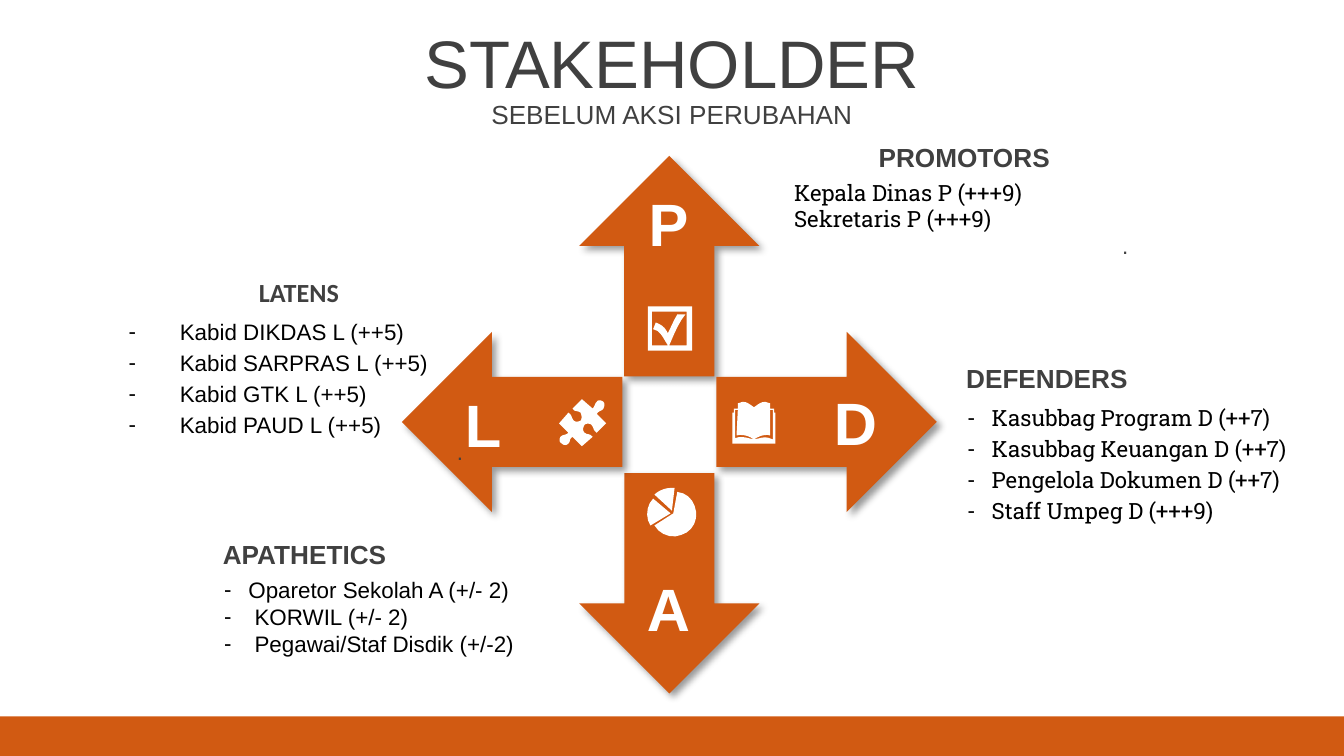
from dataclasses import dataclass
from typing import NamedTuple

from lxml import etree
from pptx import Presentation
from pptx.dml.color import RGBColor
from pptx.enum.shapes import MSO_SHAPE
from pptx.enum.text import MSO_ANCHOR, MSO_AUTO_SIZE, PP_ALIGN
from pptx.oxml.ns import qn
from pptx.util import Inches, Pt

RECTANGLE, UP_ARROW = MSO_SHAPE.RECTANGLE, MSO_SHAPE.UP_ARROW
LEFT, CENTER, RIGHT = PP_ALIGN.LEFT, PP_ALIGN.CENTER, PP_ALIGN.RIGHT
TOP, MIDDLE = MSO_ANCHOR.TOP, MSO_ANCHOR.MIDDLE
GROW, FIXED = MSO_AUTO_SIZE.SHAPE_TO_FIT_TEXT, MSO_AUTO_SIZE.NONE


@dataclass(frozen=True)
class Theme:
    """Colours, fonts and type sizes of the slide."""
    accent: str = "D15A12"
    grey: str = "404040"
    black: str = "000000"
    white: str = "FFFFFF"
    sans: str = "Arial"
    slab: str = "Roboto Slab"
    humanist: str = "Calibri"
    title: int = 36
    letter: int = 32
    heading: int = 14
    body: int = 12


class Box(NamedTuple):
    """A rectangle in inches."""
    left: float
    top: float
    width: float
    height: float

    def emu(self):
        """Return the four lengths for python-pptx."""
        return [Inches(length) for length in self]


THEME = Theme()
BOOK = ("M 16 28 C 22 27 24 25 30 28 L 30 6 L 28 6 C 28 12 28 19 28 25 C 25 24 20 25 16 28 "
        "L 16 4 C 19 2 21 0 24 0 C 25 0 27 1 28 1 L 28 5 L 31 5 L 31 8 L 32 8 L 32 31 "
        "L 0 31 L 0 8 L 1 8 L 1 5 L 4 5 L 4 1 C 5 1 7 0 8 0 C 11 0 13 2 16 4 L 16 28 "
        "C 12 25 7 24 3 25 L 4 6 L 2 6 L 2 27 C 7 25 11 27 16 28")
PUZZLE = ("M 33 2 C 34 3 34 5 33 7 C 32 9 30 8 28 11 L 35 18 L 28 25 C 25 23 26 21 24 19 "
          "C 23 18 20 18 19 19 C 18 21 17 23 19 25 C 22 27 22 25 25 28 L 17 35 L 10 28 "
          "C 7 30 9 31 7 33 C 5 35 3 34 2 33 C 0 32 0 30 1 28 C 3 26 5 27 7 25 L 0 18 "
          "L 7 10 C 10 12 9 14 11 16 C 12 17 14 17 16 16 C 17 15 17 12 16 10 "
          "C 13 8 12 10 10 7 L 17 0 L 25 7 C 27 5 26 4 28 2 C 29 0 32 1 33 2")
PIE = ("M 4 8 L 17 19 L 2 28 C -2 22 -1 13 4 8 "
       "M 22 3 C 30 4 35 10 36 18 C 37 26 32 33 25 35 C 18 38 9 35 5 28 L 19 19 "
       "M 18 0 L 20 0 L 18 17 L 5 5 C 8 2 13 0 18 0")
CHECK = ("M 3 4 L 3 29 L 15 29 C 12 25 10 18 4 17 L 6 12 C 11 14 13 16 15 20 "
         "C 18 14 19 11 22 6 L 28 6 C 23 12 19 22 16 29 L 29 29 L 29 4 "
         "M 0 0 L 33 0 L 33 33 L 0 33")


def paint(shape, color):
    """Fill a shape with one colour, without outline or inherited shadow."""
    shape.shadow.inherit = False
    shape.fill.solid()
    shape.fill.fore_color.rgb = RGBColor.from_string(color)
    shape.line.fill.background()


def cast_shadow(shape):
    """Give a shape a soft shadow towards the lower right."""
    effects = shape._element.spPr.find(qn("a:effectLst"))
    shadow = etree.SubElement(effects, qn("a:outerShdw"), blurRad=str(Pt(4)), dist=str(Pt(3)),
                              dir=str(45 * 60000), algn="tl", rotWithShape="0")
    color = etree.SubElement(shadow, qn("a:srgbClr"), val=THEME.black)
    etree.SubElement(color, qn("a:alpha"), val="40000")


def write(paragraph, text, font, size, color, bold=False, align=LEFT):
    """Put one styled run into a paragraph."""
    paragraph.alignment = align
    run = paragraph.add_run()
    run.text = text
    for attribute, value in {"name": font, "size": Pt(size), "bold": bold}.items():
        setattr(run.font, attribute, value)
    run.font.color.rgb = RGBColor.from_string(color)


def prepare(shape, anchor=TOP, fit=GROW):
    """Set up a shape's text frame and return it."""
    formats = {"word_wrap": True, "vertical_anchor": anchor, "auto_size": fit}
    for attribute, value in formats.items():
        setattr(shape.text_frame, attribute, value)
    return shape.text_frame


def add_bullet(paragraph, indent, hang):
    """Give a paragraph a dash and a hanging indent."""
    properties = paragraph._p.get_or_add_pPr()
    properties.set("marL", str(Inches(indent)))
    properties.set("indent", str(-Inches(hang)))
    etree.SubElement(properties, qn("a:buFont"), typeface=THEME.sans)
    etree.SubElement(properties, qn("a:buChar"), char="-")


def trace(outline):
    """Turn an outline in hundredths of an inch into contours of points."""
    tokens = iter(outline.split())
    contours = []
    for command in tokens:
        points = [(int(next(tokens)), int(next(tokens))) for _ in range(3 if command == "C" else 1)]
        if command == "M":
            contours.append(points)
        elif command == "L":
            contours[-1] += points
        else:
            controls = [contours[-1][-1], *points]
            for t in (0.2, 0.4, 0.6, 0.8, 1):
                weights = ((1 - t) ** 3, 3 * t * (1 - t) ** 2, 3 * t * t * (1 - t), t ** 3)
                contours[-1].append([sum(w * c[axis] for w, c in zip(weights, controls))
                                     for axis in (0, 1)])
    return contours


def draw_icon(slide, left, top, outline):
    """Draw a white icon from its upper left corner."""
    contours = [[(Inches(left + x / 100), Inches(top + y / 100)) for x, y in contour]
                for contour in trace(outline)]
    builder = slide.shapes.build_freeform(*contours[0][0], scale=1.0)
    for number, contour in enumerate(contours):
        if number:
            builder.move_to(*contour[0])
        builder.add_line_segments(contour[1:], close=True)
    paint(builder.convert_to_shape(), THEME.white)


def draw_heading(slide, box):
    """Place the title and the line below it."""
    title = slide.shapes.title
    title.left, title.top, title.width, title.height = box._replace(height=0.63).emu()
    subtitle = slide.shapes.add_textbox(*box._replace(top=box.top + 0.55, height=0.31).emu())
    for shape, text, size in ((title, "STAKEHOLDER", THEME.title),
                              (subtitle, "SEBELUM AKSI PERUBAHAN", THEME.heading)):
        write(prepare(shape, MIDDLE, FIXED).paragraphs[0], text, THEME.sans, size, THEME.grey,
              align=CENTER)


def draw_wheel(slide, box):
    """Place four arrows around the centre, each with a letter and an icon."""
    middle_x, middle_y = box.left + box.width / 2, box.top + box.height / 2
    arms = [("P", 0, (0, -1.18), (0, -1.5), (-0.16, -0.88), CHECK),
            ("D", 90, (1.17, -0.02), (1.39, -0.02), (0.47, -0.17), BOOK),
            ("A", 180, (0, 1.18), (0, 1.36), (-0.16, 0.47), PIE),
            ("L", 270, (-1.17, -0.02), (-1.38, -0.01), (-0.82, -0.19), PUZZLE)]
    for name, rotation, (x, y), (name_x, name_y), (icon_x, icon_y), icon in arms:
        arrow = slide.shapes.add_shape(
            UP_ARROW, *Box(middle_x + x - 0.67, middle_y + y - 0.82, 1.34, 1.64).emu())
        arrow.rotation = rotation
        paint(arrow, THEME.accent)
        cast_shadow(arrow)
        letter = slide.shapes.add_textbox(
            *Box(middle_x + name_x - 0.47, middle_y + name_y - 0.32, 0.93, 0.64).emu())
        write(prepare(letter, MIDDLE).paragraphs[0], name, THEME.sans, THEME.letter,
              THEME.white, True, CENTER)
        draw_icon(slide, middle_x + icon_x, middle_y + icon_y, icon)


def draw_group(slide, box, title, names, title_font=THEME.sans, font=THEME.sans, align=LEFT,
               indent=0, hang=0, spacing=1, closing=""):
    """Place a stakeholder group's heading and the list of its members."""
    heading = slide.shapes.add_textbox(*box._replace(height=0.34).emu())
    write(prepare(heading).paragraphs[0], title, title_font, THEME.heading, THEME.grey, True, align)
    members = slide.shapes.add_textbox(
        *box._replace(top=box.top + 0.28, height=box.height - 0.28).emu())
    frame = prepare(members)
    for number, name in enumerate(names):
        paragraph = frame.add_paragraph() if number else frame.paragraphs[0]
        paragraph.line_spacing = spacing
        if hang:
            add_bullet(paragraph, indent, hang)
        write(paragraph, name, font, THEME.body, THEME.black)
    if closing:
        write(frame.add_paragraph(), closing, THEME.sans, THEME.body, THEME.grey, align=RIGHT)


deck = Presentation()
deck.slide_width, deck.slide_height = Inches(10), Inches(10 * 9 / 16)
stakeholders = deck.slides.add_slide(deck.slide_layouts[5])
paint(stakeholders.shapes.add_shape(RECTANGLE, *Box(0, 5.33, 10, 0.3).emu()), THEME.accent)
draw_heading(stakeholders, Box(0, 0.14, 10, 0.86))
draw_wheel(stakeholders, Box(2.99, 1.16, 3.98, 4))
draw_group(stakeholders, Box(1.56, 3.96, 2.73, 0.98), "APATHETICS",
           ["Oparetor Sekolah A (+/- 2)", " KORWIL (+/- 2)", " Pegawai/Staf Disdik (+/-2)"],
           indent=0.19, hang=0.18)
draw_group(stakeholders, Box(7.09, 2.65, 2.79, 1.3), "DEFENDERS",
           ["Kasubbag Program D (++7)", "Kasubbag Keuangan D (++7)", "Pengelola Dokumen D (++7)",
            "Staff Umpeg D (+++9)"], font=THEME.slab, indent=0.19, hang=0.18, spacing=1.15)
draw_group(stakeholders, Box(0.86, 2.01, 2.73, 1.51), "LATENS",
           ["Kabid DIKDAS L (++5)", "Kabid SARPRAS L (++5)", "Kabid GTK L (++5)",
            "Kabid PAUD L (++5)"], title_font=THEME.humanist, align=CENTER,
           indent=0.38, hang=0.38, spacing=1.15, closing=". ")
draw_group(stakeholders, Box(5.81, 1, 2.73, 0.99), "PROMOTORS",
           ["Kepala Dinas P (+++9)", "Sekretaris P (+++9)"],
           font=THEME.slab, align=CENTER, closing=". ")
deck.save("out.pptx")
